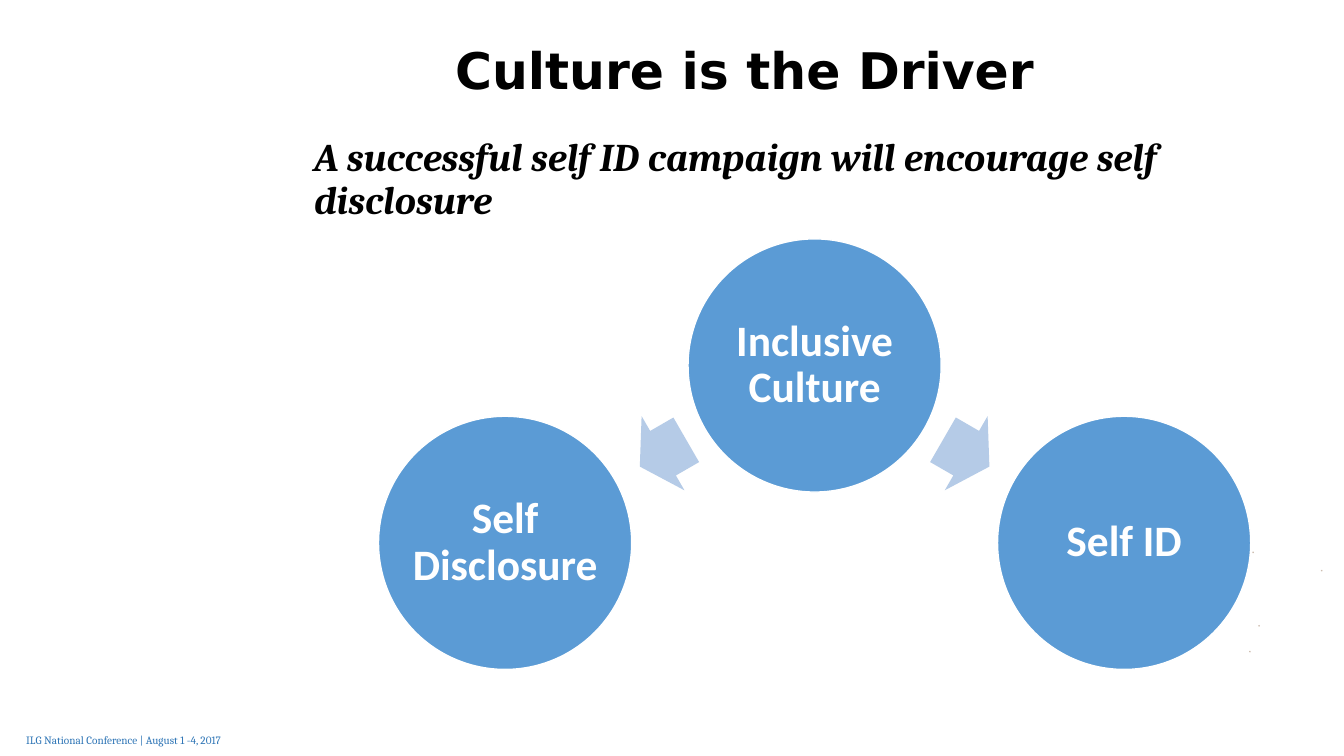
from pptx import Presentation
from pptx.dml.color import RGBColor
from pptx.enum import shapes as s, text as t
from pptx.util import Cm, Pt

BLACK = RGBColor(0x00, 0x00, 0x00)
WHITE = RGBColor(0xFF, 0xFF, 0xFF)
BLUE = RGBColor(0x5B, 0x9B, 0xD5)
PALE = RGBColor(0xB5, 0xCB, 0xE7)
NAVY = RGBColor(0x2E, 0x75, 0xB6)
SAND = RGBColor(0xCE, 0xBE, 0xB1)


def write(shape, words, font, size, color, bold=True, italic=False, wrap=True,
          align=t.PP_ALIGN.LEFT, anchor=t.MSO_ANCHOR.TOP, inset=0.25, left=None):
    """Fill a shape with one formatted paragraph; insets are in cm."""
    frame = shape.text_frame
    frame.text = words
    frame.word_wrap = wrap
    frame.auto_size = t.MSO_AUTO_SIZE.NONE
    frame.vertical_anchor = anchor
    frame.margin_top = frame.margin_bottom = frame.margin_right = Cm(inset)
    frame.margin_left = Cm(inset if left is None else left)
    para = frame.paragraphs[0]
    para.alignment = align
    para.line_spacing = 0.9
    para.space_before = Pt(0)
    for run in para.runs:
        run.font.name = font
        run.font.size = Pt(size)
        run.font.bold = bold
        run.font.italic = italic
        run.font.color.rgb = color


def draw(kind, x, y, w, h, color):
    """Add a plain filled shape; lengths are in cm."""
    shape = slide.shapes.add_shape(kind, Cm(x), Cm(y), Cm(w), Cm(h))
    shape.shadow.inherit = False
    shape.fill.solid()
    shape.fill.fore_color.rgb = color
    shape.line.fill.background()
    return shape


deck = Presentation()
deck.slide_width, deck.slide_height = Cm(33.87), Cm(19.05)
slide = deck.slides.add_slide(deck.slide_layouts[5])

# Faint specks at the right edge
for x, y in [(31.3, 12.73), (31.56, 13.9), (31.48, 16.4), (31.71, 15.75), (33.29, 14.36)]:
    draw(s.MSO_SHAPE.OVAL, x, y, 0.04, 0.04, SAND)

# Title, subtitle and footer
title = slide.shapes.title
title.left, title.top, title.width, title.height = Cm(7.67), Cm(0.46), Cm(24.89), Cm(2.79)
write(title, "Culture is the Driver", "DejaVu Sans", 36, BLACK,
      anchor=t.MSO_ANCHOR.MIDDLE, left=3.8)

lead = slide.shapes.add_textbox(Cm(7.67), Cm(3.23), Cm(24.89), Cm(2.6))
write(lead, "A successful self ID campaign will encourage self disclosure",
      "Cambria", 28, BLACK, italic=True)

foot = slide.shapes.add_textbox(Cm(0.41), Cm(18.4), Cm(7.7), Cm(0.61))
write(foot, "ILG National Conference | August 1 -4, 2017", "Cambria", 8, NAVY,
      bold=False, inset=0.13, left=0.25)

# Culture circle on top, its two outcomes below on either side
MID, SIZE, STEP = 20.53, 6.38, 7.8
circles = [("Inclusive\vCulture", 0, 6.02), ("Self ID", 1, 10.49),
           ("Self\vDisclosure", -1, 10.49)]
for words, side, top in circles:
    disc = draw(s.MSO_SHAPE.OVAL, MID + side * STEP - SIZE / 2, top, SIZE, SIZE, BLUE)
    disc.line.color.rgb = WHITE
    disc.line.width = Pt(1)
    write(disc, words, "Calibri", 31, WHITE, wrap=False, inset=0,
          align=t.PP_ALIGN.CENTER, anchor=t.MSO_ANCHOR.MIDDLE)

WIDE, TALL, GAP = 1.35, 2.16, 3.82
for kind, side in [(s.MSO_SHAPE.RIGHT_ARROW, 1), (s.MSO_SHAPE.LEFT_ARROW, -1)]:
    arrow = draw(kind, MID + side * GAP - WIDE / 2, 10.34, WIDE, TALL, PALE)
    arrow.adjustments[0] = 0.6
    arrow.adjustments[1] = 0.5
    arrow.rotation = side * 30

deck.save("out.pptx")
